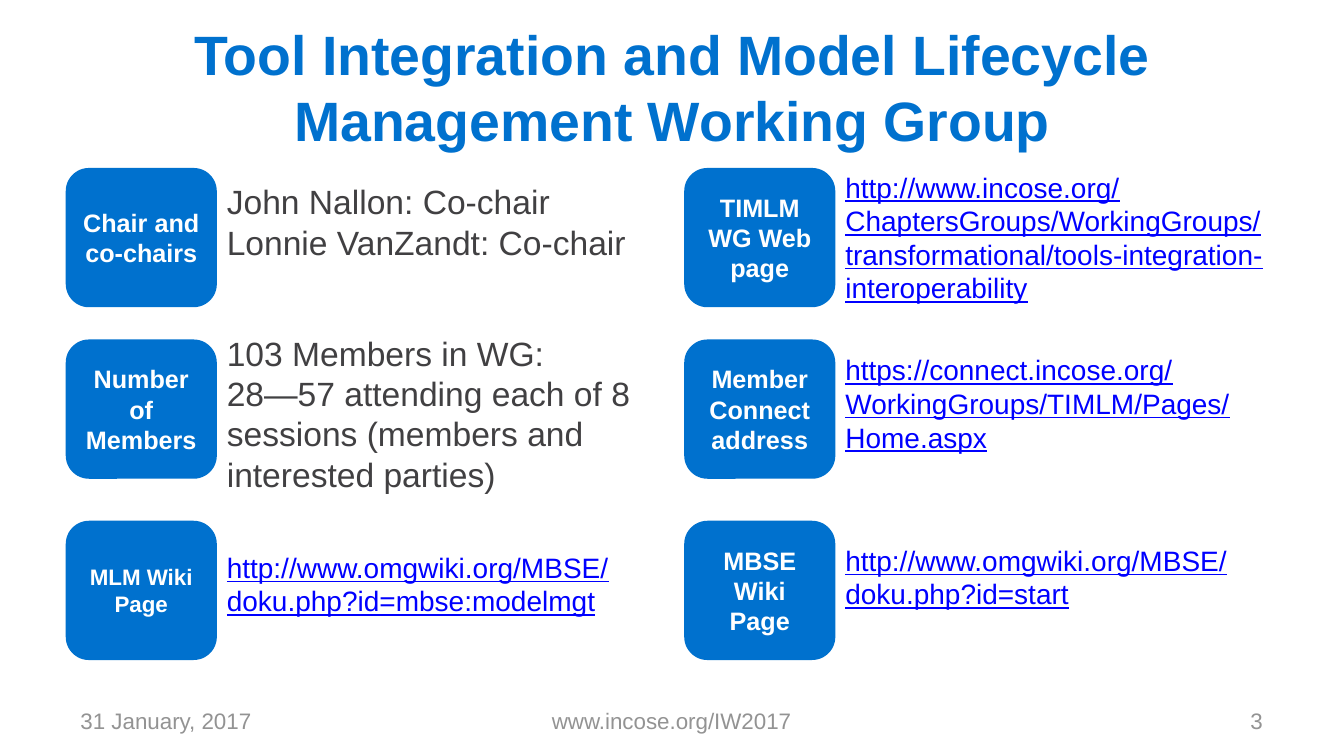
from dataclasses import dataclass

from pptx import Presentation
from pptx.dml.color import RGBColor
from pptx.enum import shapes, text
from pptx.util import Pt

# Content
TITLE = "Tool Integration and Model Lifecycle Management Working Group"
CENTER, LEFT, RIGHT = text.PP_ALIGN.CENTER, text.PP_ALIGN.LEFT, text.PP_ALIGN.RIGHT
FOOTER = [  # words, left, width, alignment
    ("31 January, 2017", 48, 224, LEFT),
    ("www.incose.org/IW2017", 328, 304, CENTER),
    ("3", 688, 224, RIGHT),
]
# Each column, top to bottom: label lines, detail lines, detail top
COLUMNS = [
    [
        (["Chair and ", "co-chairs"],
         ["John Nallon: Co-chair", "Lonnie VanZandt: Co-chair"], 126),
        (["Number of Members"],
         ["103 Members in WG:",
          "28—57 attending each of 8 sessions (members and interested parties)"], 234),
        (["MLM Wiki", "Page"],
         ["http://www.omgwiki.org/MBSE/doku.php?id=mbse:modelmgt"], 389.5),
    ],
    [
        (["TIMLM WG Web page"],
         ["http://www.incose.org/ChaptersGroups/WorkingGroups/"
          "transformational/tools-integration-interoperability"], 118),
        (["Member Connect address"],
         ["https://connect.incose.org/WorkingGroups/TIMLM/Pages/Home.aspx"], 248.5),
        (["MBSE Wiki Page"],
         ["http://www.omgwiki.org/MBSE/doku.php?id=start"], 384.5),
    ],
]


@dataclass
class Theme:
    font: str = "Arial"
    blue: str = "0071CE"
    white: str = "FFFFFF"
    body: str = "414042"
    link: str = "0000FF"
    grey: str = "939393"
    title_size: float = 39.6
    body_size: float = 24
    link_size: float = 20
    label_size: float = 18
    small_size: float = 16


theme = Theme()

# Layout
CARD_LEFTS = (47, 489)
CARD_TOPS = (120, 242.5, 372)
CARD_W, CARD_H = 108, 99.5
DETAIL_WIDTHS = (323, 364)

deck = Presentation()
deck.slide_width, deck.slide_height = Pt(960.5), Pt(540)
slide = deck.slides.add_slide(deck.slide_layouts[6])


def write(frame, lines, size, color, align=LEFT, bold=None, underline=None):
    frame.word_wrap = True
    for i, line in enumerate(lines):
        paragraph = frame.paragraphs[0] if i == 0 else frame.add_paragraph()
        paragraph.alignment = align
        run = paragraph.add_run()
        run.text = line
        run.font.name, run.font.size = theme.font, Pt(size)
        run.font.bold, run.font.underline = bold, underline
        run.font.color.rgb = RGBColor.from_string(color)


def add_box(left, top, width, height):
    return slide.shapes.add_textbox(Pt(left), Pt(top), Pt(width), Pt(height)).text_frame


def add_banner(words, left, top, width, height, size, color, align, bold=None):
    frame = add_box(left, top, width, height)
    frame.vertical_anchor = text.MSO_ANCHOR.MIDDLE
    frame.margin_left = frame.margin_right = Pt(9.5)
    frame.margin_top = frame.margin_bottom = Pt(5)
    write(frame, [words], size, color, align, bold)


def add_card(label, left, top, size):
    card = slide.shapes.add_shape(shapes.MSO_SHAPE.ROUNDED_RECTANGLE,
                                  Pt(left), Pt(top), Pt(CARD_W), Pt(CARD_H))
    card.shadow.inherit = False
    card.fill.solid()
    card.fill.fore_color.rgb = RGBColor.from_string(theme.blue)
    card.line.fill.background()
    card.text_frame.vertical_anchor = text.MSO_ANCHOR.MIDDLE
    write(card.text_frame, label, size, theme.white, CENTER, bold=True)


def add_detail(lines, left, top, width):
    frame = add_box(left, top, width, 55)
    frame.auto_size = text.MSO_AUTO_SIZE.SHAPE_TO_FIT_TEXT
    if lines[0].startswith("http"):
        write(frame, lines, theme.link_size, theme.link, underline=True)
    else:
        write(frame, lines, theme.body_size, theme.body)


# Title and footer
add_banner(TITLE, 48, 16.5, 865, 90, theme.title_size, theme.blue, CENTER, bold=True)
for words, left, width, align in FOOTER:
    add_banner(words, left, 500.5, width, 29, theme.small_size, theme.grey, align)

# Cards with their details
for column, left, width in zip(COLUMNS, CARD_LEFTS, DETAIL_WIDTHS):
    for (label, detail, detail_top), top in zip(column, CARD_TOPS):
        label_size = theme.small_size if label[0] == "MLM Wiki" else theme.label_size
        add_card(label, left, top, label_size)
        add_detail(detail, left + CARD_W, detail_top, width)

deck.save("out.pptx")
